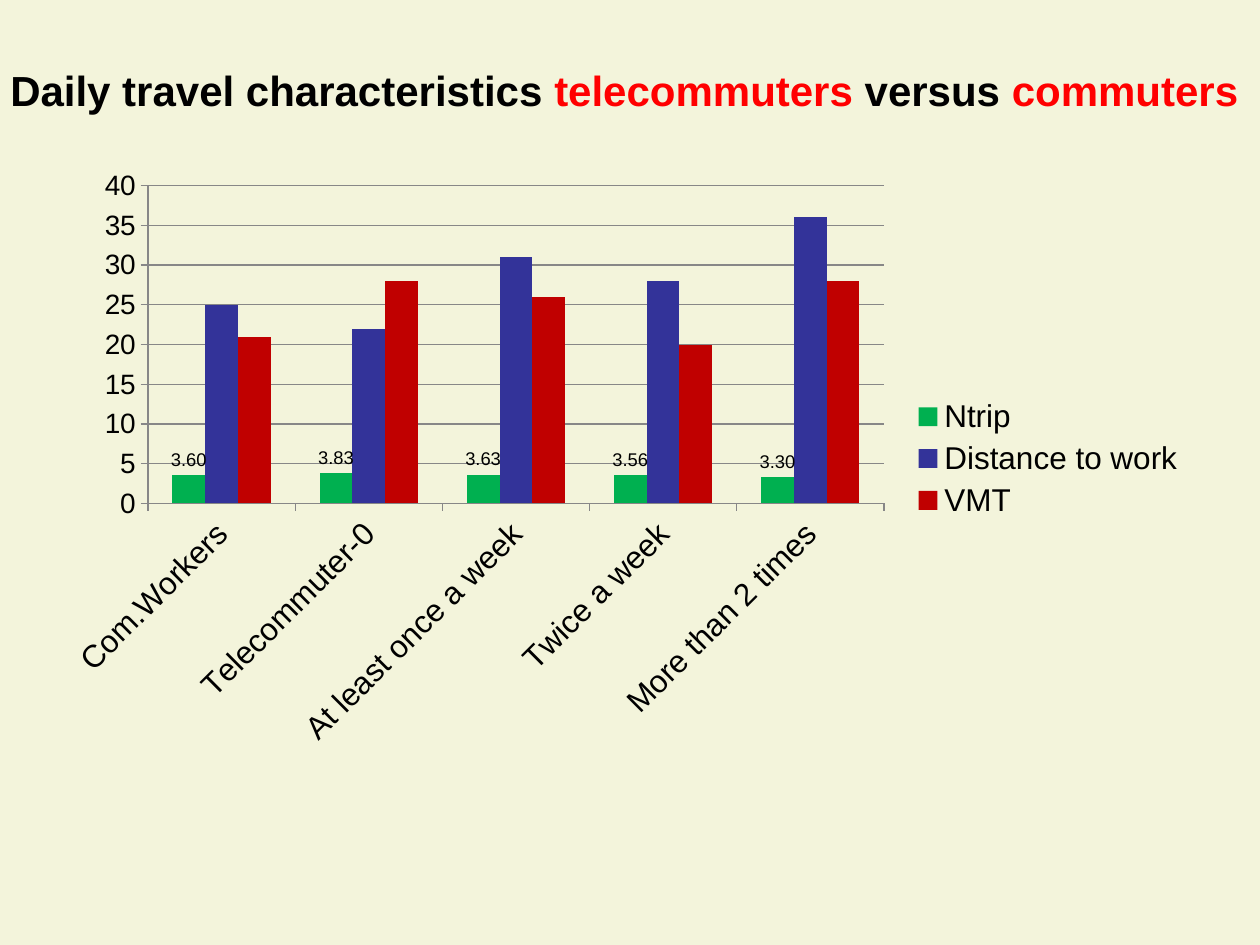
from lxml import etree
from pptx import Presentation
from pptx.chart.data import CategoryChartData
from pptx.dml.color import RGBColor
from pptx.enum.chart import XL_CHART_TYPE as ChartType
from pptx.enum.chart import XL_LABEL_POSITION as LabelPosition
from pptx.enum.chart import XL_LEGEND_POSITION as LegendPosition
from pptx.enum.chart import XL_TICK_MARK as TickMark
from pptx.enum.text import MSO_ANCHOR, PP_ALIGN
from pptx.oxml.ns import qn
from pptx.util import Cm, Pt

COLORS = {
    "background": "F3F4DB",
    "text": "000000",
    "highlight": "FF0000",
    "line": "878787",
    "Ntrip": "00B050",
    "Distance to work": "333399",
    "VMT": "C00000",
}
FONT = "Arial"
TITLE = [
    ("Daily travel characteristics ", "text"),
    ("telecommuters", "highlight"),
    (" versus ", "text"),
    ("commuters", "highlight"),
]
CATEGORIES = ["Com.Workers", "Telecommuter-0", "At least once a week",
              "Twice a week", "More than 2 times"]
SERIES = {
    "Ntrip": [3.6, 3.83, 3.63, 3.56, 3.3],
    "Distance to work": [25, 22, 31, 28, 36],
    "VMT": [21, 28, 26, 20, 28],
}


def color(name):
    return RGBColor.from_string(COLORS[name])


def style_font(font, size, color_name="text", bold=False):
    font.name = FONT
    font.size = Pt(size)
    font.bold = bold
    font.color.rgb = color(color_name)


def add_title(slide, left, top, width, height):
    frame = slide.shapes.add_textbox(left, top, width, height).text_frame
    frame.word_wrap = False
    frame.vertical_anchor = MSO_ANCHOR.TOP
    paragraph = frame.paragraphs[0]
    paragraph.alignment = PP_ALIGN.CENTER
    for text, color_name in TITLE:
        run = paragraph.add_run()
        run.text = text
        style_font(run.font, 24, color_name, bold=True)


def set_layout(element, index, box, inner=False):
    for old_layout in element.findall(qn("c:layout")):
        element.remove(old_layout)
    layout = etree.Element(qn("c:layout"))
    element.insert(index, layout)
    manual = etree.SubElement(layout, qn("c:manualLayout"))
    settings = [("layoutTarget", "inner")] if inner else []
    settings += [("xMode", "edge"), ("yMode", "edge")]
    settings += zip("xywh", map(str, box))
    for tag, value in settings:
        etree.SubElement(manual, qn(f"c:{tag}")).set("val", value)


def style_axis(axis, size):
    style_font(axis.tick_labels.font, size)
    axis.major_tick_mark = TickMark.OUTSIDE
    axis.minor_tick_mark = TickMark.NONE
    axis.format.line.color.rgb = color("line")
    axis.format.line.width = Pt(0.75)


def style_axes(chart):
    style_axis(chart.category_axis, 18)
    rotation = chart.category_axis.tick_labels.font._element.getparent().getparent().getparent()
    rotation.find(qn("a:bodyPr")).set("rot", "-2700000")

    value_axis = chart.value_axis
    style_axis(value_axis, 16)
    value_axis.minimum_scale = 0
    value_axis.maximum_scale = 40
    value_axis.major_unit = 5
    value_axis.tick_labels.number_format = "General"
    value_axis.tick_labels.number_format_is_linked = False
    gridline = value_axis.major_gridlines.format.line
    gridline.color.rgb = color("line")
    gridline.width = Pt(0.75)


def style_series(plot):
    plot.gap_width = 150
    plot.overlap = 0
    plot.vary_by_categories = False
    for series in plot.series:
        series.format.fill.solid()
        series.format.fill.fore_color.rgb = color(series.name)
        series.invert_if_negative = False
    labels = plot.series[0].data_labels
    labels.show_value = True
    labels.number_format = "0.00"
    labels.number_format_is_linked = False
    labels.position = LabelPosition.OUTSIDE_END
    style_font(labels.font, 10.5)


def add_travel_chart(slide, left, top, width, height):
    data = CategoryChartData()
    data.categories = CATEGORIES
    for name, values in SERIES.items():
        data.add_series(name, values)
    chart = slide.shapes.add_chart(
        ChartType.COLUMN_CLUSTERED, left, top, width, height, data).chart
    style_font(chart.font, 18)
    chart.has_title = False
    chart.has_legend = True
    legend = chart.legend
    legend.position = LegendPosition.RIGHT
    legend.include_in_layout = False
    style_font(legend.font, 18)
    style_axes(chart)
    style_series(chart.plots[0])
    plot_area = chart._chartSpace.find(f".//{qn('c:plotArea')}")
    set_layout(plot_area, 0, (0.085, 0.045, 0.642, 0.53), inner=True)
    set_layout(legend._element, 1, (0.75, 0.39, 0.24, 0.22))


def main():
    presentation = Presentation()
    presentation.slide_width = Cm(25.4)
    presentation.slide_height = Cm(19.05)
    slide = presentation.slides.add_slide(presentation.slide_layouts[6])
    slide.background.fill.solid()
    slide.background.fill.fore_color.rgb = color("background")
    add_title(slide, Cm(-0.18), Cm(1.17), Cm(25.53), Cm(1.27))
    add_travel_chart(slide, Cm(1.02), Cm(3.2), Cm(23.11), Cm(12.09))
    presentation.save("out.pptx")


if __name__ == "__main__":
    main()
